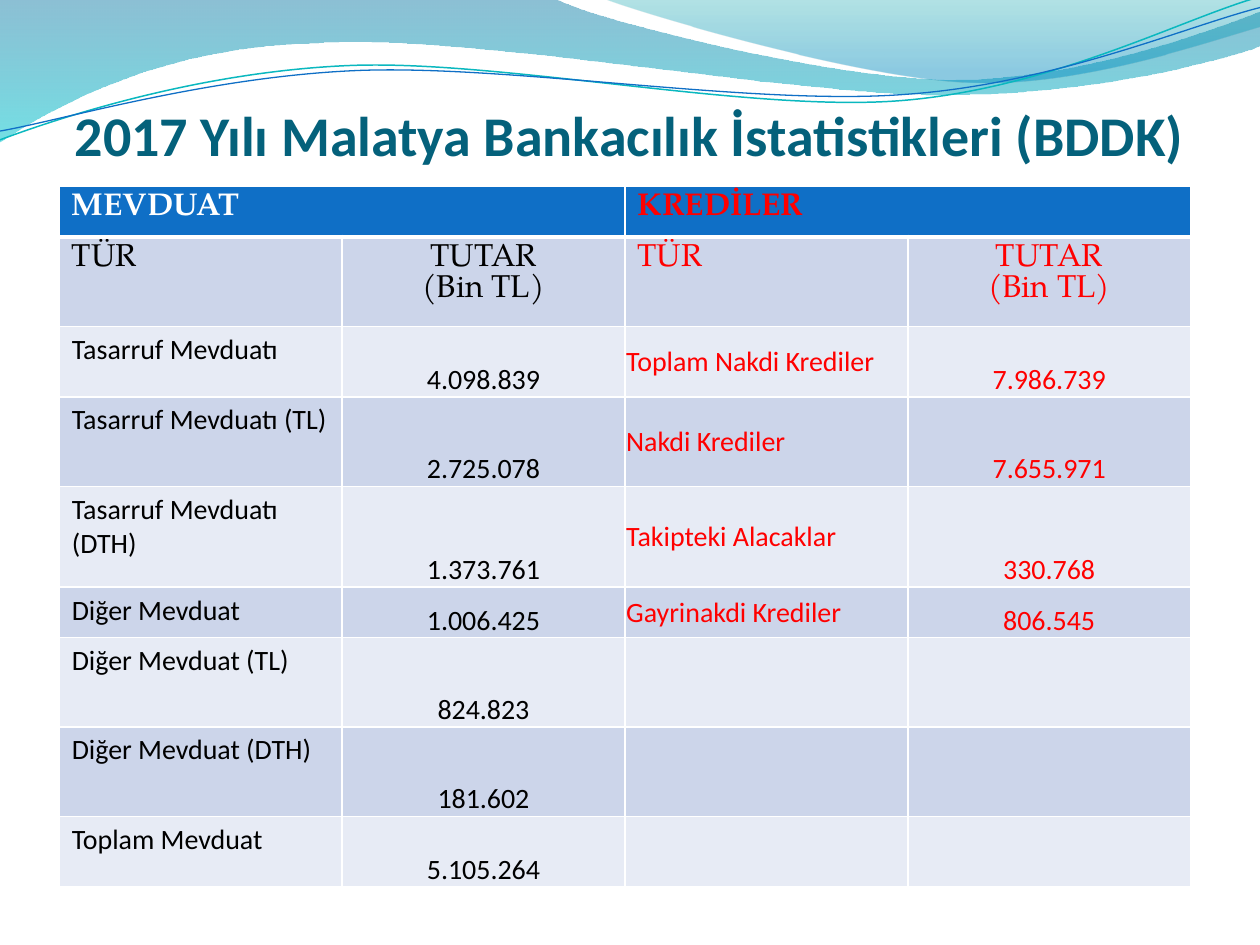
"""Build a slide with a table of Malatya banking statistics under a wave banner."""
from math import cos, radians, sin
from lxml.etree import SubElement
from pptx import Presentation
from pptx.dml.color import RGBColor
from pptx.enum.text import MSO_ANCHOR, PP_ALIGN
from pptx.oxml import parse_xml
from pptx.oxml.ns import nsdecls, qn
from pptx.util import Inches, Pt


def rgb(color):
    return RGBColor.from_string(color)


def add_curve(s, start, segments, closed):
    points = [start] + [pt for seg in segments for pt in zip(seg[::2], seg[1::2])]
    points = [(Inches(x), Inches(y)) for x, y in points]
    fb = s.shapes.build_freeform(*points[0], scale=1)
    fb.add_line_segments(points[1:], close=closed)
    sp = fb.convert_to_shape()
    sp.shadow.inherit = False
    outline = next(sp._element.iter(qn("a:moveTo"))).getparent()
    steps = iter(outline.findall(qn("a:lnTo")))
    for seg in segments:
        step = next(steps)
        if len(seg) == 6:
            curve = SubElement(outline, qn("a:cubicBezTo"))
            step.addprevious(curve)
            for ln in (step, next(steps), next(steps)):
                curve.append(ln[0])
                outline.remove(ln)
    return sp


prs = Presentation()
prs.slide_width, prs.slide_height = Inches(10), Inches(7.5)
s = prs.slides.add_slide(prs.slide_layouts[6])

waves = [
    ((0, 0), [(4.4, -0.01), (4.76, 0.17, 6.64, 0.63, 7.58, 0.63),
              (8.53, 0.63, 9.58, 0.26, 10, 0.09), (10.01, 0.36),
              (9.83, 0.44, 8.7, 0.76, 7.46, 0.75), (6.22, 0.75, 3.82, 0.28, 2.57, 0.34),
              (1.29, 0.36, 0.46, 0.83, -0.01, 1.13)],
     [(0, "0074A1", 45), (1, "00C6CF", 55)]),
    ((4.79, -0.01), [(5.09, 0.11, 6.82, 0.62, 7.69, 0.65),
                     (8.56, 0.69, 9.61, 0.32, 10, 0.21), (10, 0)],
     [(0, "00A1A9", 30), (0.8, "008BBF", 45)]),
]
for start, segments, stops in waves:
    sp = add_curve(s, start, segments, True)
    sp.line.fill.background()
    sp.fill.gradient()
    sp.fill.gradient_angle = 270
    for stop, (position, color, _) in zip(sp.fill.gradient_stops, stops):
        stop.position = position
        stop.color.rgb = rgb(color)
    for clr, (_, _, opacity) in zip(sp._element.spPr.iter(qn("a:srgbClr")), stops):
        SubElement(clr, qn("a:alpha"), val=str(opacity * 1000))

lines = [
    ([(0, 1.11), (0.48, 0.93), (1.58, 0.57), (2.77, 0.52), (3.95, 0.47), (5.93, 0.89),
      (7.13, 0.8), (8.33, 0.71), (9.38, 0.15), (9.98, -0.02)], "0AB8BF", 0.85),
    ([(0, 1.04), (0.47, 0.96), (1.64, 0.61), (2.83, 0.56), (4.03, 0.51), (5.97, 0.84),
      (7.17, 0.75), (8.36, 0.67), (9.41, 0.21), (10, 0.06)], "0F6FC6", 0.75),
]
tilt = 2.7
cx, cy = 4.99, 0.58
co, si = cos(radians(tilt)), sin(radians(tilt))
for points, color, width in lines:
    level = [(cx + (x - cx) * co - (y - cy) * si, cy + (x - cx) * si + (y - cy) * co)
             for x, y in points]
    segments = [sum(level[i:i + 3], ()) for i in range(1, len(level), 3)]
    sp = add_curve(s, level[0], segments, False)
    sp.rotation = 360 - tilt
    sp.fill.background()
    sp.line.color.rgb = rgb(color)
    sp.line.width = Pt(width)

tf = s.shapes.add_textbox(Inches(0.5), Inches(0.77), Inches(9), Inches(0.56)).text_frame
tf.word_wrap = True
tf.vertical_anchor = MSO_ANCHOR.BOTTOM
tf.margin_left = tf.margin_right = tf.margin_bottom = 0
tf.margin_top = Inches(0.05)
p = tf.paragraphs[0]
p.text = "2017 Yılı Malatya Bankacılık İstatistikleri (BDDK)"
p.alignment = PP_ALIGN.CENTER
p.font.name, p.font.size, p.font.bold = "Calibri", Pt(32), True
p.font.color.rgb = rgb("04617B")

rows = [
    ("MEVDUAT", "", "KREDİLER", ""),
    ("TÜR", "TUTAR\n(Bin TL)", "TÜR", "TUTAR\n(Bin TL)"),
    ("Tasarruf Mevduatı", "4.098.839", "Toplam Nakdi Krediler", "7.986.739"),
    ("Tasarruf Mevduatı (TL)", "2.725.078", "Nakdi Krediler", "7.655.971"),
    ("Tasarruf Mevduatı (DTH)", "1.373.761", "Takipteki Alacaklar", "330.768"),
    ("Diğer Mevduat", "1.006.425", "Gayrinakdi Krediler", "806.545"),
    ("Diğer Mevduat (TL)", "824.823", "", ""),
    ("Diğer Mevduat (DTH)", "181.602", "", ""),
    ("Toplam Mevduat", "5.105.264", "", ""),
]
heights = [0.4, 0.71, 0.56, 0.71, 0.8, 0.4, 0.71, 0.71, 0.56]
tbl = s.shapes.add_table(len(rows), 4, Inches(0.47), Inches(1.48),
                         Inches(8.98), Inches(5.55)).table
for col in tbl.columns:
    col.width = Inches(8.98 / 4)
for i, (texts, height) in enumerate(zip(rows, heights)):
    tbl.rows[i].height = Inches(height)
    for j, text in enumerate(texts):
        cell = tbl.cell(i, j)
        cell.fill.solid()
        cell.fill.fore_color.rgb = rgb("0F6FC6" if i == 0 else "E7EBF5" if i % 2 == 0 else "CCD5EA")
        tcPr = cell._tc.get_or_add_tcPr()
        for k, side in enumerate("LRTB"):
            heavy = (i == 0 and side == "B") or (i == 1 and side == "T")
            tcPr.insert(k, parse_xml(
                f'<a:ln{side} {nsdecls("a")} w="{Pt(3 if heavy else 1)}"><a:solidFill>'
                f'<a:srgbClr val="FFFFFF"/></a:solidFill></a:ln{side}>'))
        if not text:
            continue
        if i > 1 and j > 0:
            cell.margin_left = cell.margin_right = cell.margin_top = Inches(0.01)
            cell.margin_bottom = 0
            cell.vertical_anchor = MSO_ANCHOR.MIDDLE if j == 2 else MSO_ANCHOR.BOTTOM
        cell.text = text
        for p in cell.text_frame.paragraphs:
            if j % 2:
                p.alignment = PP_ALIGN.CENTER
            elif i > 1 and j == 2:
                p.alignment = PP_ALIGN.JUSTIFY
            p.font.name = "Calibri" if i > 1 else "TeX Gyre Pagella"
            p.font.size = Pt(16 if i > 1 else 18)
            p.font.bold = i == 0
            p.font.color.rgb = rgb("FF0000" if j > 1 else "FFFFFF" if i == 0 else "000000")
for j in (0, 2):
    tbl.cell(0, j).merge(tbl.cell(0, j + 1))

prs.save("out.pptx")
